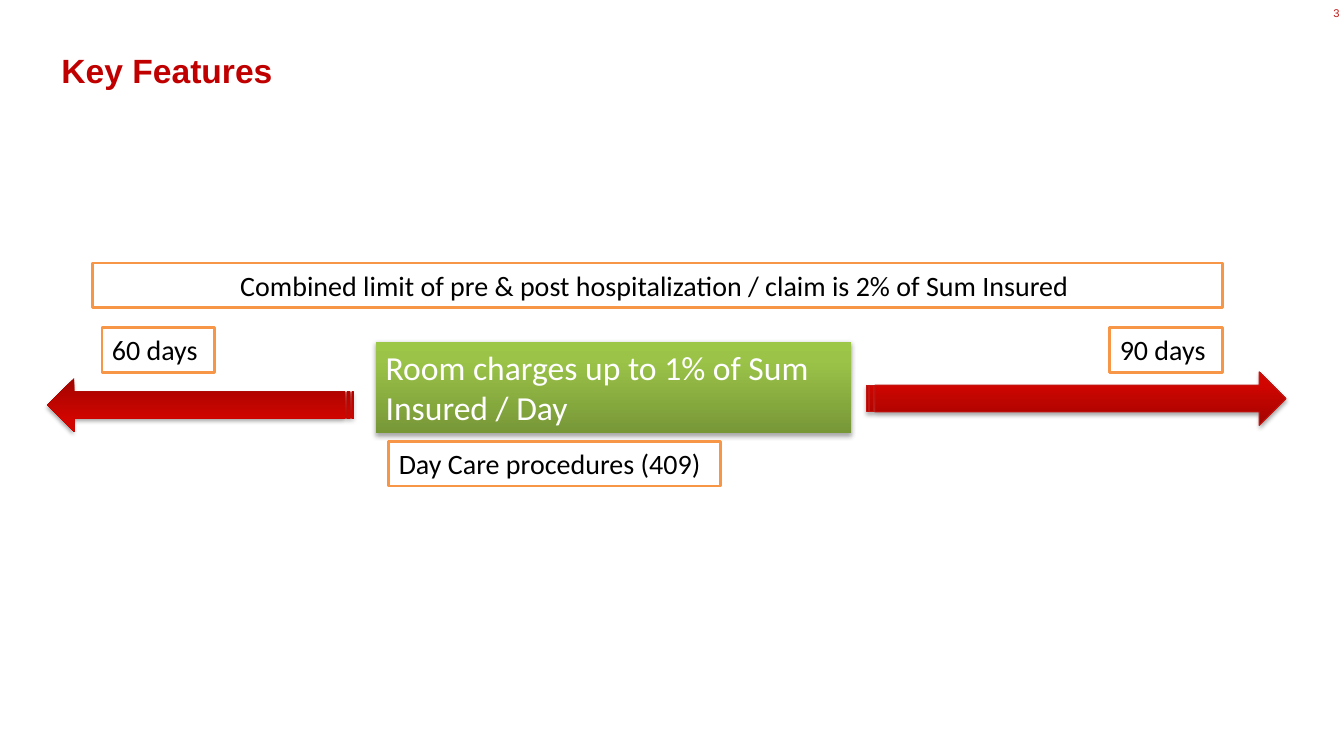
from dataclasses import dataclass
from lxml.etree import SubElement
from pptx import Presentation
from pptx.dml.color import RGBColor
from pptx.enum.shapes import MSO_SHAPE
from pptx.enum.text import MSO_ANCHOR, MSO_AUTO_SIZE, PP_ALIGN
from pptx.oxml import parse_xml
from pptx.oxml.ns import nsdecls, qn
from pptx.util import Cm, Pt


@dataclass(frozen=True)
class Theme:
    head: str = "Arial"
    body: str = "Calibri"
    title: str = "C00000"
    number: str = "C21B17"
    edge: str = "C21612"
    frame: str = "F79646"
    white: str = "FFFFFF"
    black: str = "000000"
    red: tuple = ("A20400", "D20500", "D30500")
    green: tuple = ("779737", "9BC348", "9DC746")
    tiny: int = 8
    text: int = 20
    large: int = 24


def write(shape, text, *, size, color, font, bold=False, align=PP_ALIGN.LEFT,
          anchor=MSO_ANCHOR.TOP, wrap=True, grow=False, inset=None, space=None):
    frame = shape.text_frame
    frame.word_wrap = wrap
    frame.vertical_anchor = anchor
    frame.auto_size = MSO_AUTO_SIZE.SHAPE_TO_FIT_TEXT if grow else MSO_AUTO_SIZE.NONE
    if inset is not None:
        frame.margin_left = frame.margin_right = Cm(inset)
        frame.margin_top = frame.margin_bottom = Cm(inset)
    para = frame.paragraphs[0]
    para.alignment = align
    if space:
        para.line_spacing = Pt(space)
    run = para.add_run()
    run.text = text
    run.font.name = font
    run.font.size = Pt(size)
    run.font.bold = bold
    run.font.color.rgb = RGBColor.from_string(color)


class Deck:
    def __init__(self, theme):
        self.theme = theme
        self.file = Presentation()
        self.file.slide_width = Cm(33.87)
        self.file.slide_height = Cm(19.05)
        self.slide = self.file.slides.add_slide(self.file.slide_layouts[6])

    def label(self, text, place, **style):
        box = self.slide.shapes.add_textbox(*map(Cm, place))
        write(box, text, font=self.theme.head, **style)

    def shape(self, kind, place, line=None, width=0.75):
        item = self.slide.shapes.add_shape(kind, *map(Cm, place))
        item.shadow.inherit = False
        if line:
            item.line.color.rgb = RGBColor.from_string(line)
            item.line.width = Pt(width)
        else:
            item.line.fill.background()
        return item

    def shade(self, item, colors):
        item.fill.gradient()
        props = item._element.spPr
        stops = "".join(
            f'<a:gs pos="{spot}"><a:srgbClr val="{color}"/></a:gs>'
            for spot, color in zip((0, 80000, 100000), colors))
        props.replace(props.find(qn("a:gradFill")), parse_xml(
            f'<a:gradFill {nsdecls("a")} rotWithShape="1"><a:gsLst>{stops}</a:gsLst>'
            '<a:lin ang="16200000" scaled="0"/></a:gradFill>'))
        glow = SubElement(props.find(qn("a:effectLst")), qn("a:outerShdw"),
                          blurRad="40000", dist="23000", dir="5400000",
                          rotWithShape="0")
        tone = SubElement(glow, qn("a:srgbClr"), val=self.theme.black)
        SubElement(tone, qn("a:alpha"), val="35000")

    def arrow(self, place, turn=0, line=None):
        item = self.shape(MSO_SHAPE.STRIPED_RIGHT_ARROW, place, line)
        item.rotation = turn
        self.shade(item, self.theme.red)

    def panel(self, text, place):
        item = self.shape(MSO_SHAPE.RECTANGLE, place)
        self.shade(item, self.theme.green)
        write(item, text, size=self.theme.large, color=self.theme.white,
              font=self.theme.body, grow=True)

    def box(self, text, place, **style):
        item = self.shape(MSO_SHAPE.RECTANGLE, place, self.theme.frame, 2)
        item.fill.solid()
        item.fill.fore_color.rgb = RGBColor.from_string(self.theme.white)
        write(item, text, size=self.theme.text, color=self.theme.black,
              font=self.theme.body, grow=True, **style)


def main():
    theme = Theme()
    deck = Deck(theme)
    deck.label("3", (33.02, 0.15, 0.74, 0.48), size=theme.tiny,
               color=theme.number, align=PP_ALIGN.RIGHT, inset=0)
    deck.label("Key Features", (1.3, 1.22, 31.06, 1.35), size=theme.large,
               color=theme.title, bold=True, anchor=MSO_ANCHOR.MIDDLE, space=22)
    deck.arrow((21.84, 9.37, 10.57, 1.35), line=theme.edge)
    deck.arrow((1.19, 9.53, 7.72, 1.35), turn=180)
    deck.panel("Room charges up to 1% of Sum Insured / Day", (9.47, 8.61, 11.99, 2.31))
    high = 1.12
    for text, left, top, wide in (
            ("60 days", 2.57, 8.26, 2.84),
            ("Day Care procedures (409)", 9.8, 11.13, 8.36),
            ("90 days", 27.97, 8.26, 2.84)):
        deck.box(text, (left, top, wide, high), wrap=False)
    deck.box("Combined limit of pre & post hospitalization / claim is 2% of Sum Insured ",
             (2.34, 6.63, 28.47, high), align=PP_ALIGN.CENTER)
    deck.file.save("out.pptx")


if __name__ == "__main__":
    main()
